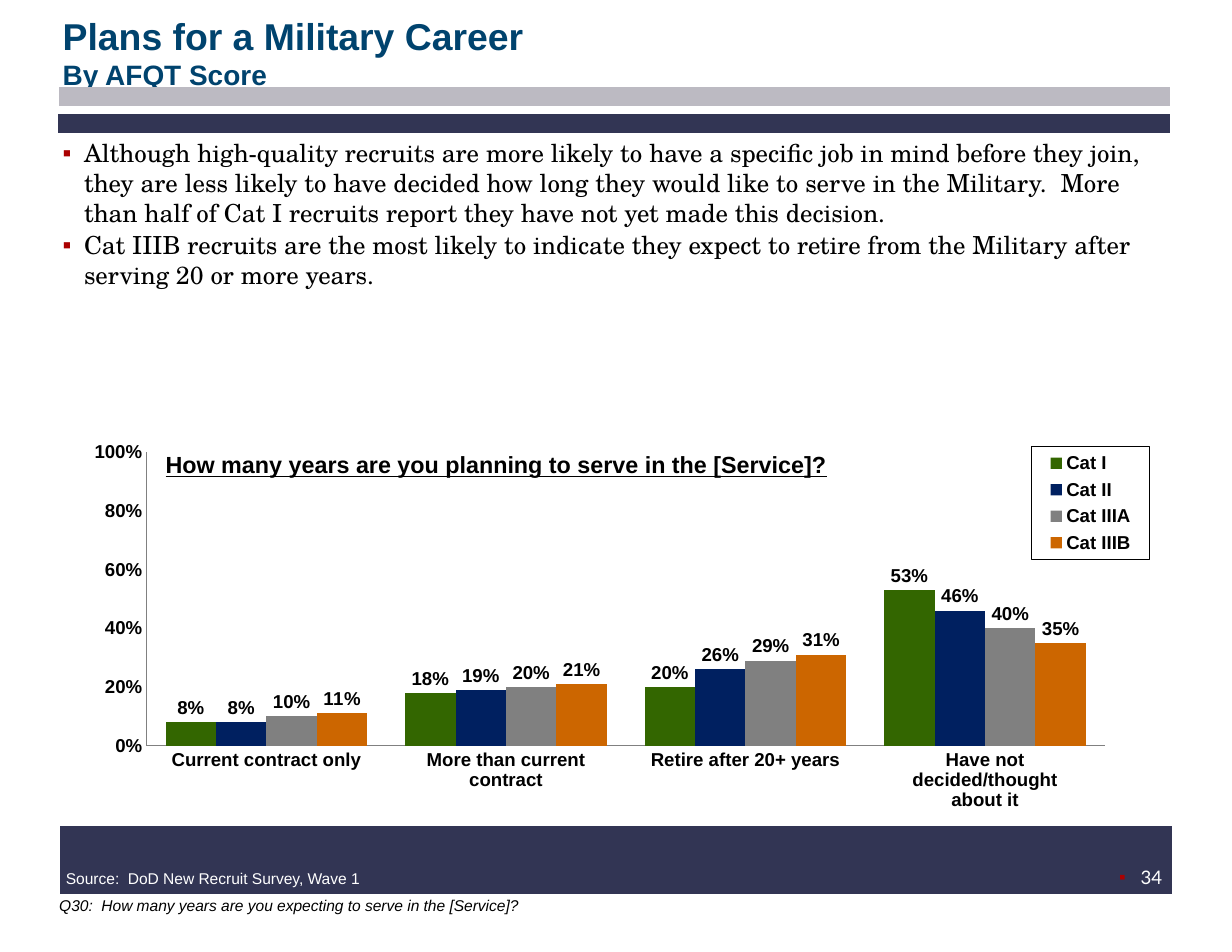
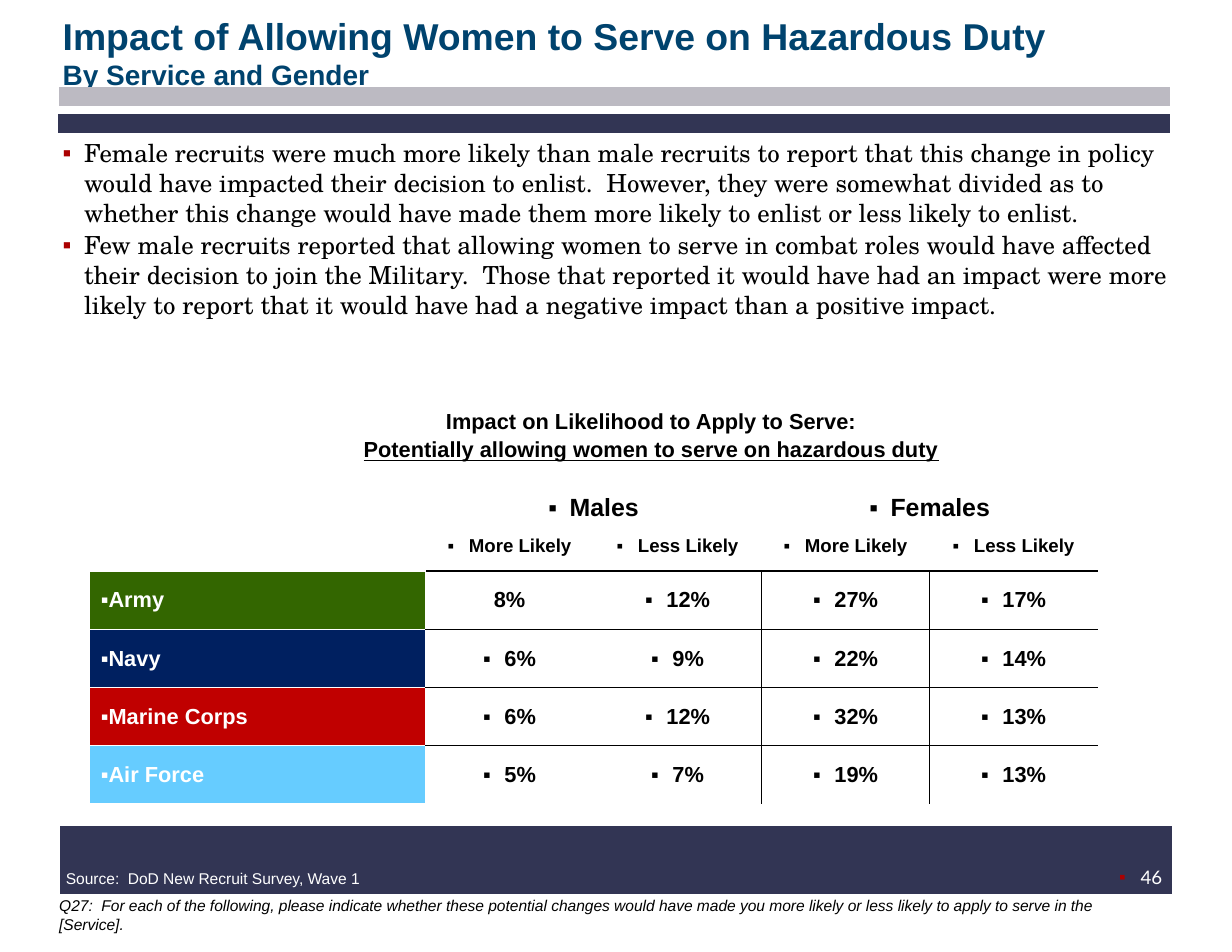
from lxml import etree
from pptx import Presentation
from pptx import util as u
from pptx.chart.data import CategoryChartData
from pptx.dml.color import RGBColor
from pptx.enum import chart as ch
from pptx.enum import shapes, text
from pptx.oxml import parse_xml
from pptx.oxml.ns import nsdecls, qn

BLACK, WHITE, NAVY, GRAY = "000000", "FFFFFF", "323554", "BCBAC2"
TITLE, BULLET, AXIS = "00436E", "AB0101", "808080"
GREEN, BLUE, RED, SKY, ORANGE = "336600", "002060", "C00000", "66CCFF", "CC6600"
HANG = 0.19
NO_GRID = "{2D5ABB26-0587-4C30-8999-92F81FD0307C}"
CENTER, LEFT = text.PP_ALIGN.CENTER, text.PP_ALIGN.LEFT


def rgb(value):
    """Turn a hex string into a colour."""
    return RGBColor.from_string(value)


def set_font(font, size, color=BLACK, name="Arial", bold=False, italic=False, underline=False):
    """Apply the given look to a font."""
    font.name, font.size, font.color.rgb = name, u.Pt(size), rgb(color)
    font.bold, font.italic, font.underline = bold, italic, underline


def write(para, words, size, align=LEFT, before=0, **look):
    """Add one formatted run to a paragraph."""
    para.alignment, para.space_before = align, u.Pt(before)
    span = para.add_run()
    span.text = words
    set_font(span.font, size, **look)


def indent(para, left, first=0):
    """Set the left margin and first-line indent in inches."""
    props = para._p.get_or_add_pPr()
    props.set("marL", str(u.Inches(left)))
    props.set("indent", str(u.Inches(first)))
    return props


def add_bullet(para, color=None, hang=HANG):
    """Give a paragraph a small square bullet."""
    para.space_before = u.Pt(0)
    props = indent(para, hang, -hang)
    if color:
        tint = etree.SubElement(props, qn("a:buClr"))
        etree.SubElement(tint, qn("a:srgbClr"), val=color)
    etree.SubElement(props, qn("a:buFont"), typeface="Arial")
    etree.SubElement(props, qn("a:buChar"), char="▪")


def set_border(cell, color, *sides):
    """Draw one-point borders on the named sides of a cell."""
    props = cell._tc.get_or_add_tcPr()
    for place, side in enumerate(sides):
        props.insert(place, parse_xml(
            f'<a:ln{side} {nsdecls("a")} w="12700"><a:solidFill><a:srgbClr val="{color}"/>'
            f'</a:solidFill></a:ln{side}>'))


def make_layout(x, y, width, height, inner=False):
    """Build a manual layout for a chart part."""
    target = '<c:layoutTarget val="inner"/>' if inner else ""
    return parse_xml(
        f'<c:layout {nsdecls("c")}><c:manualLayout>{target}<c:xMode val="edge"/>'
        f'<c:yMode val="edge"/><c:x val="{x}"/><c:y val="{y}"/><c:w val="{width}"/>'
        f'<c:h val="{height}"/></c:manualLayout></c:layout>')


def clear_layout(part):
    """Remove any automatic layout from a chart part."""
    for item in part.findall(qn("c:layout")):
        part.remove(item)


class Report:
    """Holds the report style and the current page."""

    def __init__(self):
        """Open a landscape letter deck."""
        self.deck = Presentation()
        self.deck.slide_width, self.deck.slide_height = u.Inches(11), u.Inches(8.5)
        self.page = None

    def place(self, box, left, top, width, height, margin=None):
        """Position a text shape and return its frame."""
        box.left, box.top = u.Inches(left), u.Inches(top)
        box.width, box.height = u.Inches(width), u.Inches(height)
        frame = box.text_frame
        frame.word_wrap, frame.auto_size = True, text.MSO_AUTO_SIZE.NONE
        if margin is not None:
            frame.margin_left = frame.margin_right = u.Inches(margin)
            frame.margin_top = frame.margin_bottom = u.Inches(0.06)
        return frame

    def add_text(self, left, top, width, height, margin=None):
        """Add an empty text box and return its frame."""
        box = self.page.shapes.add_textbox(0, 0, 0, 0)
        return self.place(box, left, top, width, height, margin)

    def add_band(self, left, y, width, weight, color):
        """Add a thick horizontal line."""
        band = self.page.shapes.add_connector(
            shapes.MSO_CONNECTOR.STRAIGHT, u.Inches(left), u.Inches(y),
            u.Inches(left + width), u.Inches(y))
        band.line.width, band.line.color.rgb = u.Pt(weight), rgb(color)
        etree.SubElement(band._element.spPr, qn("a:effectLst"))

    def add_page(self, title, subtitle, points, note, number):
        """Start a page with bands, title, bullets and footer."""
        self.page = self.deck.slides.add_slide(self.deck.slide_layouts[1])
        self.add_band(0.53, 0.86, 9.92, 12, GRAY)
        self.add_band(0.54, 7.68, 9.92, 44, NAVY)
        self.add_band(0.52, 1.1, 9.93, 12, NAVY)

        frame = self.place(self.page.shapes.title, 0.5, 0.18, 10.05, 0.57, 0.06)
        frame.vertical_anchor = text.MSO_ANCHOR.MIDDLE
        write(frame.paragraphs[0], title, 24, color=TITLE, bold=True)
        write(frame.add_paragraph(), subtitle, 18, color=TITLE, bold=True)

        frame = self.place(self.page.placeholders[1], 0.5, 1.17, 10, 1.42, 0.06)
        for index, point in enumerate(points):
            para = frame.add_paragraph() if index else frame.paragraphs[0]
            add_bullet(para, BULLET)
            write(para, point, 16, before=1.6 if index else 0, name="TeX Gyre Schola")

        para = self.add_text(9.6, 7.68, 1.17, 0.58).paragraphs[0]
        add_bullet(para, BULLET)
        write(para, number, 12, CENTER, color=WHITE, name="Lato")
        para = self.add_text(0.24, 7.95, 10.21, 0.27).paragraphs[0]
        indent(para, HANG)
        write(para, note, 10, italic=True)
        para = self.add_text(0.49, 7.71, 5.5, 0.27).paragraphs[0]
        write(para, "Source:  DoD New Recruit Survey, Wave 1", 10, color=WHITE)

    def add_chart(self, categories, series):
        """Add the clustered column chart with its boxed legend."""
        data = CategoryChartData(number_format="0%")
        data.categories = categories
        for name, _, values in series:
            data.add_series(name, values)
        chart = self.page.shapes.add_chart(
            ch.XL_CHART_TYPE.COLUMN_CLUSTERED, u.Inches(0.49), u.Inches(3.69),
            u.Inches(10.51), u.Inches(3.73), data).chart
        chart.has_title = False
        set_font(chart.font, 12, bold=True)

        plot = chart.plots[0]
        plot.gap_width, plot.overlap, plot.vary_by_categories = 75, 0, False
        for bars, (_, color, _) in zip(plot.series, series):
            bars.format.fill.solid()
            bars.format.fill.fore_color.rgb = rgb(color)
            bars.invert_if_negative = False
        plot.has_data_labels = True
        labels = plot.data_labels
        labels.show_value, labels.position = True, ch.XL_LABEL_POSITION.OUTSIDE_END
        labels.number_format, labels.number_format_is_linked = "0%", False
        set_font(labels.font, 12, bold=True)

        for axis in (chart.category_axis, chart.value_axis):
            axis.has_major_gridlines = False
            axis.major_tick_mark = axis.minor_tick_mark = ch.XL_TICK_MARK.NONE
            axis.format.line.color.rgb = rgb(AXIS)
            set_font(axis.tick_labels.font, 12, bold=True)
        scale = chart.value_axis
        scale.minimum_scale, scale.maximum_scale, scale.major_unit = 0, 1, 0.2
        scale.tick_labels.number_format = "0%"
        scale.tick_labels.number_format_is_linked = False

        area = chart._chartSpace.xpath("c:chart/c:plotArea")[0]
        clear_layout(area)
        area.insert(0, make_layout(0.078, 0.094, 0.814, 0.702, inner=True))
        chart.has_legend = True
        legend = chart.legend
        legend.position, legend.include_in_layout = ch.XL_LEGEND_POSITION.RIGHT, False
        set_font(legend.font, 12, bold=True)
        clear_layout(legend._element)
        legend._element.find(qn("c:legendPos")).addnext(make_layout(0.83, 0.08, 0.1, 0.27))
        legend._element.find(qn("c:overlay")).addnext(parse_xml(
            f'<c:spPr {nsdecls("c", "a")}><a:ln w="9525"><a:solidFill>'
            f'<a:srgbClr val="{BLACK}"/></a:solidFill></a:ln></c:spPr>'))

    def fill_cell(self, cell, words, size, align=CENTER, color=BLACK, bullet=True, hang=HANG):
        """Write one table cell without a fill."""
        cell.fill.background()
        para = cell.text_frame.paragraphs[0]
        if not words:
            etree.SubElement(para._p, qn("a:endParaRPr"), sz="1200")
            return
        if bullet:
            add_bullet(para, hang=hang)
        write(para, words, size, align, color=color, bold=True)

    def add_table(self, groups, answers, services):
        """Add the table of answers by service and gender."""
        shape = self.page.shapes.add_table(
            2 + len(services), 5, u.Inches(0.8), u.Inches(4.36), u.Inches(9), u.Inches(2.82))
        table = shape.table
        table._tbl.tblPr.find(qn("a:tableStyleId")).text = NO_GRID
        table.first_row = table.horz_banding = False
        for index, column in enumerate(table.columns):
            column.width = u.Inches(1.5 if index else 3)
        for index, row in enumerate(table.rows):
            row.height = u.Inches(0.37 if index < 2 else 0.52)

        heads = ["", groups[0], "", groups[1], ""]
        for col, (group, answer) in enumerate(zip(heads, ["", *answers, *answers])):
            self.fill_cell(table.cell(0, col), group, 16)
            self.fill_cell(table.cell(1, col), answer, 12)
            if col:
                set_border(table.cell(1, col), BLACK, "B")
        for col in (1, 3):
            table.cell(0, col).merge(table.cell(0, col + 1))

        for row, (service, color, values) in enumerate(services, 2):
            label = table.cell(row, 0)
            self.fill_cell(label, service, 14, LEFT, WHITE, hang=0)
            label.fill.solid()
            label.fill.fore_color.rgb = rgb(color)
            label.vertical_anchor = text.MSO_ANCHOR.MIDDLE
            set_border(label, WHITE, "L", "R", "T", "B")
            for col, value in enumerate(values, 1):
                cell = table.cell(row, col)
                self.fill_cell(cell, value, 14, bullet=(row, col) != (2, 1))
                cell.vertical_anchor = text.MSO_ANCHOR.MIDDLE
                middle = {2: ["R"], 3: ["L"]}.get(col, [])
                bottom = ["B"] if row < len(services) + 1 else []
                set_border(cell, BLACK, *middle, "T", *bottom)


def main():
    """Build both pages and save the deck."""
    report = Report()
    report.add_page(
        "Plans for a Military Career", "By AFQT Score",
        ["Although high-quality recruits are more likely to have a specific job in mind before "
         "they join, they are less likely to have decided how long they would like to serve in "
         "the Military.  More than half of Cat I recruits report they have not yet made this "
         "decision.",
         "Cat IIIB recruits are the most likely to indicate they expect to retire from the "
         "Military after serving 20 or more years."],
        "Q30:  How many years are you expecting to serve in the [Service]?", "34")
    report.add_chart(
        ["Current contract only", "More than current contract", "Retire after 20+ years",
         "Have not decided/thought about it"],
        [("Cat I", GREEN, (0.08, 0.18, 0.2, 0.53)),
         ("Cat II", BLUE, (0.08, 0.19, 0.26, 0.46)),
         ("Cat IIIA", AXIS, (0.1, 0.2, 0.29, 0.4)),
         ("Cat IIIB", ORANGE, (0.11, 0.21, 0.31, 0.35))])
    question = report.add_text(1.38, 3.97, 6.87, 0.45).paragraphs[0]
    write(question, "How many years are you planning to serve in the [Service]?", 15,
          bold=True, underline=True)

    report.add_page(
        "Impact of Allowing Women to Serve on Hazardous Duty", "By Service and Gender",
        ["Female recruits were much more likely than male recruits to report that this change "
         "in policy would have impacted their decision to enlist.  However, they were somewhat "
         "divided as to whether this change would have made them more likely to enlist or less "
         "likely to enlist.",
         "Few male recruits reported that allowing women to serve in combat roles would have "
         "affected their decision to join the Military.  Those that reported it would have had "
         "an impact were more likely to report that it would have had a negative impact than a "
         "positive impact."],
        "Q27:  For each of the following, please indicate whether these potential changes would "
        "have made you more likely or less likely to apply to serve in the [Service].", "46")
    report.add_table(
        ["Males", "Females"], ["More Likely", "Less Likely"],
        [("Army", GREEN, ("8%", "12%", "27%", "17%")),
         ("Navy", BLUE, ("6%", "9%", "22%", "14%")),
         ("Marine Corps", RED, ("6%", "12%", "32%", "13%")),
         ("Air Force", SKY, ("5%", "7%", "19%", "13%"))])
    heading = report.add_text(2.38, 3.58, 6.87, 0.61, 0.11)
    write(heading.paragraphs[0], "Impact on Likelihood to Apply to Serve:", 14, CENTER, bold=True)
    write(heading.add_paragraph(), "Potentially allowing women to serve on hazardous duty", 14,
          CENTER, 1.4, bold=True, underline=True)
    report.deck.save("out.pptx")


if __name__ == "__main__":
    main()
